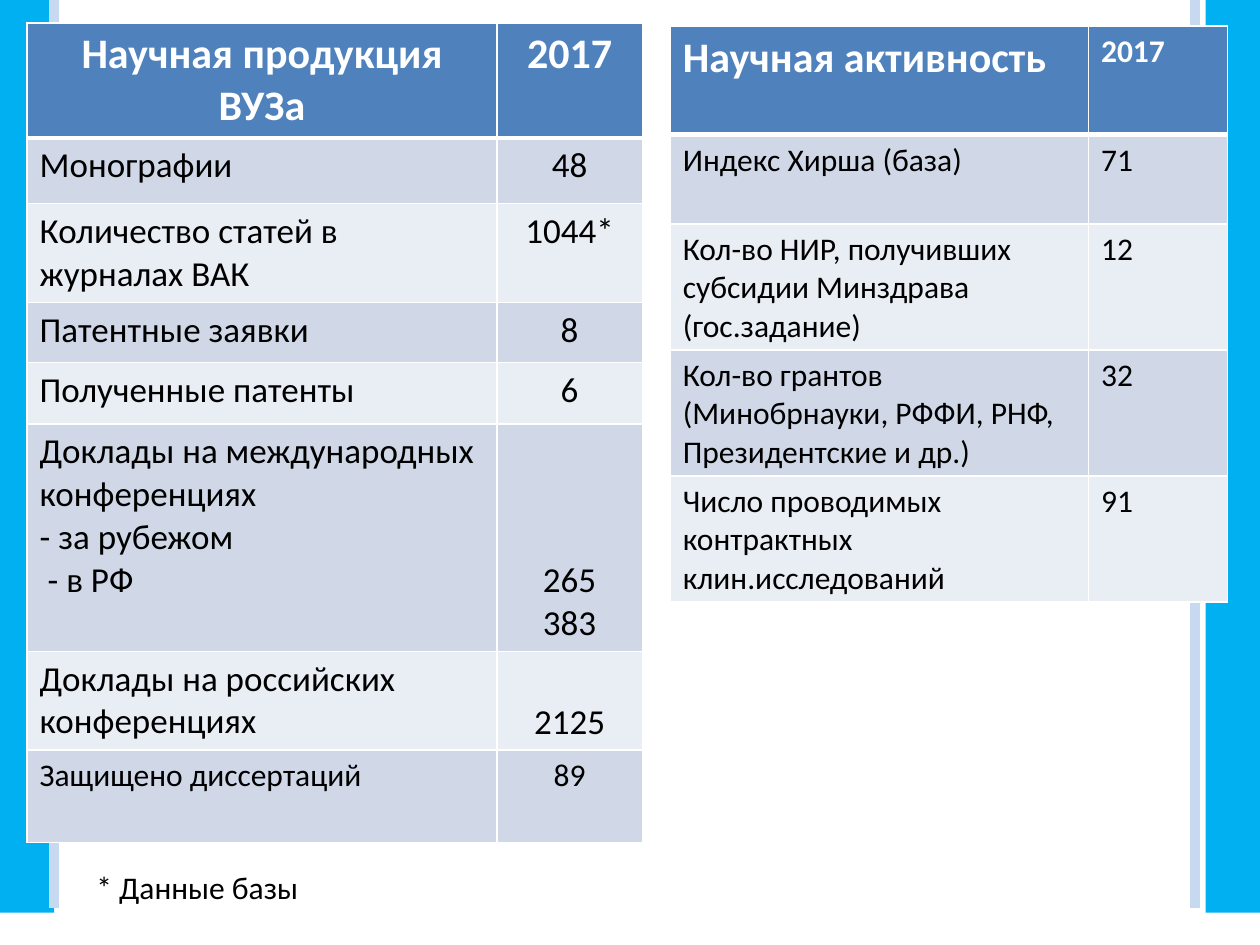
from dataclasses import dataclass

from lxml import etree
from pptx import Presentation
from pptx.dml.color import RGBColor
from pptx.enum.shapes import MSO_CONNECTOR, MSO_SHAPE
from pptx.enum.text import MSO_ANCHOR, MSO_AUTO_SIZE, PP_ALIGN
from pptx.oxml.ns import qn
from pptx.util import Pt

RECTANGLE = MSO_SHAPE.RECTANGLE
STRAIGHT = MSO_CONNECTOR.STRAIGHT
LEFT, CENTER = PP_ALIGN.LEFT, PP_ALIGN.CENTER
TOP, BOTTOM = MSO_ANCHOR.TOP, MSO_ANCHOR.BOTTOM
FIT_SHAPE = MSO_AUTO_SIZE.SHAPE_TO_FIT_TEXT


@dataclass(frozen=True)
class Theme:
    font: str = "Calibri"
    side: RGBColor = RGBColor(0x00, 0xB0, 0xF0)
    stripe: RGBColor = RGBColor(0xC6, 0xD9, 0xF1)
    header: RGBColor = RGBColor(0x4F, 0x81, 0xBD)
    odd_row: RGBColor = RGBColor(0xD0, 0xD8, 0xE8)
    even_row: RGBColor = RGBColor(0xE9, 0xED, 0xF4)
    light: RGBColor = RGBColor(0xFF, 0xFF, 0xFF)
    dark: RGBColor = RGBColor(0x00, 0x00, 0x00)
    heading: int = 24
    body: int = 20
    small: int = 18


THEME = Theme()
SLIDE_WIDTH, SLIDE_HEIGHT = 720, 540
SIDE_WIDTH, SIDE_HEIGHT = 31, 521.5
STRIPE_HEIGHT = 519

PRODUCTS = [
    ("Научная продукция ВУЗа", "2017"),
    ("Монографии", "48"),
    ("Количество статей в журналах ВАК", "1044*"),
    ("Патентные заявки", "8"),
    ("Полученные патенты", "6"),
    ("Доклады на международных конференциях\n- за рубежом\n - в РФ", "265\n383"),
    ("Доклады на российских конференциях", "2125"),
    ("Защищено диссертаций", "89"),
]
PRODUCT_HEIGHTS = [65, 37.5, 56.5, 34.5, 35, 130, 56, 53]
BOTTOM_VALUE_ROWS = (5, 6)

ACTIVITIES = [
    ("Научная активность", "2017"),
    ("Индекс Хирша (база)", "71"),
    ("Кол-во НИР, получивших субсидии Минздрава (гос.задание)", "12"),
    ("Кол-во грантов (Минобрнауки, РФФИ, РНФ, Президентские и др.)", "32"),
    ("Число проводимых контрактных клин.исследований", "91"),
]
ACTIVITY_HEIGHTS = [62, 51, 72, 72, 72]


def apply_format(target, values):
    for name, value in values.items():
        setattr(target, name, value)


def write_text(text_frame, text, size, color, bold=False, alignment=LEFT):
    text_frame.text = text
    for paragraph in text_frame.paragraphs:
        paragraph.alignment = alignment
        for run in paragraph.runs:
            apply_format(run.font, {"name": THEME.font, "size": Pt(size), "bold": bold})
            run.font.color.rgb = color


def add_side(slide, left):
    shape = slide.shapes.add_shape(
        RECTANGLE, Pt(left), Pt(0), Pt(SIDE_WIDTH), Pt(SIDE_HEIGHT))
    shape.shadow.inherit = False
    shape.fill.solid()
    shape.fill.fore_color.rgb = THEME.side
    shape.line.fill.background()


def add_stripe(slide, x):
    connector = slide.shapes.add_connector(
        STRAIGHT, Pt(x), Pt(0), Pt(x), Pt(STRIPE_HEIGHT))
    connector.line.color.rgb = THEME.stripe
    connector.line.width = Pt(6)
    etree.SubElement(connector._element.spPr, qn("a:effectLst"))


def add_table(slide, left, top, widths, heights, rows):
    frame = slide.shapes.add_table(
        len(rows), len(widths), Pt(left), Pt(top), Pt(sum(widths)), Pt(sum(heights)))
    table = frame.table
    for column, width in zip(table.columns, widths):
        column.width = Pt(width)
    for row, height in zip(table.rows, heights):
        row.height = Pt(height)
    return table


def underline_header(cell):
    border = etree.Element(qn("a:lnB"), w=str(Pt(3)))
    fill = etree.SubElement(border, qn("a:solidFill"))
    etree.SubElement(fill, qn("a:srgbClr"), val=str(THEME.light))
    cell._tc.get_or_add_tcPr().insert(0, border)


def fill_table(table, rows, sizes, alignments, bottom_rows=()):
    for row_index, values in enumerate(rows):
        is_header = row_index == 0
        band = THEME.odd_row if row_index % 2 else THEME.even_row
        for column_index, value in enumerate(values):
            cell = table.cell(row_index, column_index)
            cell.fill.solid()
            cell.fill.fore_color.rgb = THEME.header if is_header else band
            if is_header:
                underline_header(cell)
            at_bottom = column_index == 1 and row_index in bottom_rows
            cell.vertical_anchor = BOTTOM if at_bottom else TOP
            centered = is_header and CENTER in alignments
            write_text(
                cell.text_frame, value, sizes[row_index][column_index],
                THEME.light if is_header else THEME.dark, is_header,
                CENTER if centered else alignments[column_index])


def add_note(slide, text):
    box = slide.shapes.add_textbox(Pt(48), Pt(492.5), Pt(137), Pt(29))
    apply_format(box.text_frame, {"word_wrap": False, "auto_size": FIT_SHAPE})
    write_text(box.text_frame, text, THEME.small, THEME.dark)


def main():
    presentation = Presentation()
    apply_format(presentation, {
        "slide_width": Pt(SLIDE_WIDTH), "slide_height": Pt(SLIDE_HEIGHT)})
    slide = presentation.slides.add_slide(presentation.slide_layouts[6])

    for left in (0, SLIDE_WIDTH - SIDE_WIDTH):
        add_side(slide, left)
    for x in (SIDE_WIDTH, 683):
        add_stripe(slide, x)

    heading, body, small = THEME.heading, THEME.body, THEME.small
    products = add_table(slide, 15.5, 13, (268.5, 83), PRODUCT_HEIGHTS, PRODUCTS)
    product_sizes = [(heading,) * 2] + [(body,) * 2] * 6 + [(small,) * 2]
    fill_table(products, PRODUCTS, product_sizes, (LEFT, CENTER), BOTTOM_VALUE_ROWS)

    add_note(slide, "* Данные базы")

    activities = add_table(slide, 383, 15, (239, 79.5), ACTIVITY_HEIGHTS, ACTIVITIES)
    activity_sizes = [(heading, small)] + [(small,) * 2] * 4
    fill_table(activities, ACTIVITIES, activity_sizes, (LEFT, LEFT))

    presentation.save("out.pptx")


if __name__ == "__main__":
    main()
